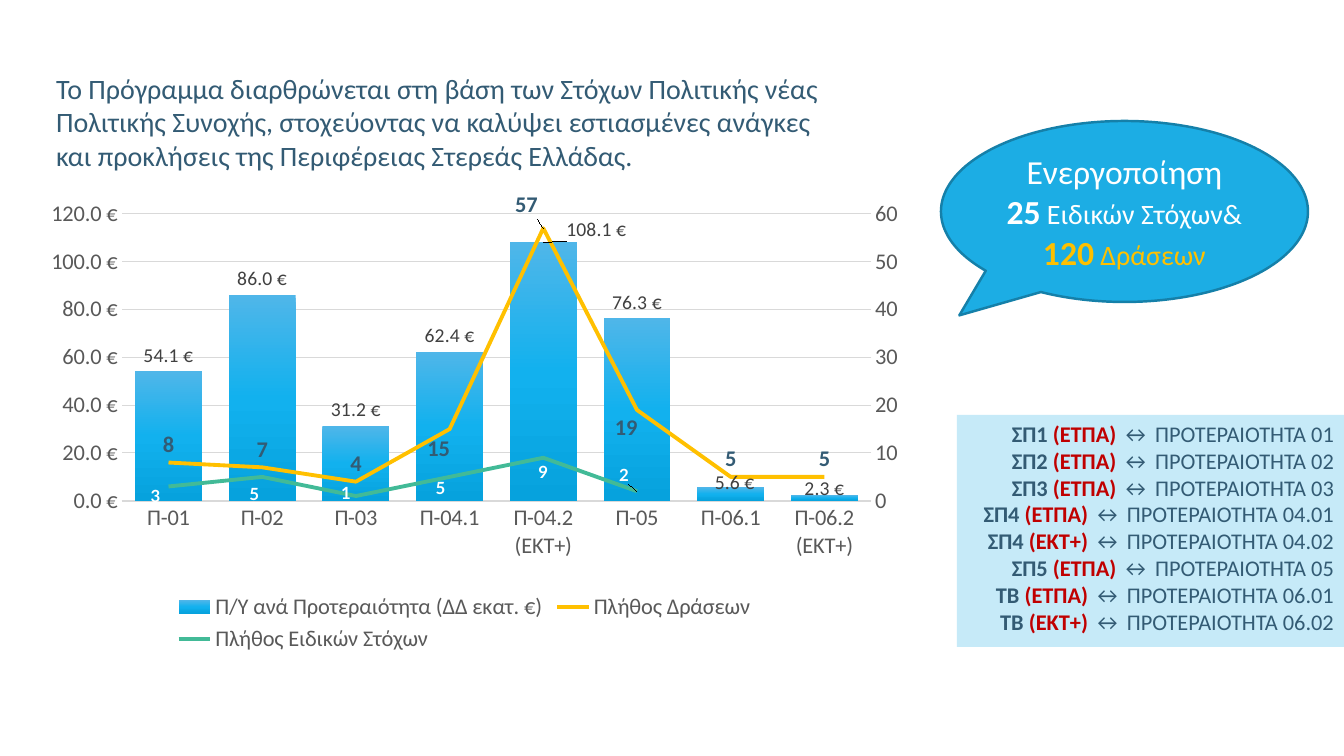
from copy import deepcopy
from dataclasses import dataclass
from typing import Any

from lxml import etree
from pptx import Presentation
from pptx.chart.data import CategoryChartData
from pptx.dml.color import RGBColor
from pptx.enum.chart import XL_CHART_TYPE, XL_LABEL_POSITION, XL_LEGEND_POSITION, XL_MARKER_STYLE, XL_TICK_MARK
from pptx.enum.shapes import MSO_SHAPE
from pptx.enum.text import MSO_ANCHOR, MSO_AUTO_SIZE, PP_ALIGN
from pptx.oxml import parse_xml
from pptx.oxml.ns import nsdecls, qn
from pptx.util import Emu, Pt

COLUMN = XL_CHART_TYPE.COLUMN_CLUSTERED
OUT_END, ABOVE, BELOW = XL_LABEL_POSITION.OUTSIDE_END, XL_LABEL_POSITION.ABOVE, XL_LABEL_POSITION.BELOW
LEGEND_BOTTOM = XL_LEGEND_POSITION.BOTTOM
NO_MARKER = XL_MARKER_STYLE.NONE
NO_TICK = XL_TICK_MARK.NONE
RECT, CALLOUT = MSO_SHAPE.RECTANGLE, MSO_SHAPE.OVAL_CALLOUT
TOP, MIDDLE = MSO_ANCHOR.TOP, MSO_ANCHOR.MIDDLE
NO_FIT = MSO_AUTO_SIZE.NONE
LEFT, CENTER, RIGHT = PP_ALIGN.LEFT, PP_ALIGN.CENTER, PP_ALIGN.RIGHT

NAVY, BLUE, RED, GOLD, GREEN = "335B74", "1CADE4", "C00000", "FFC000", "42BA97"
WHITE, GREY, PALE = "FFFFFF", "595959", "D9D9D9"
EURO = '#,##0.0\\ "€"'
CHART_W, CHART_H = 929, 480


@dataclass(frozen=True)
class Style:
    size: int
    color: str
    bold: bool = False
    name: str = "Calibri"


@dataclass(frozen=True)
class Measure:
    name: str
    values: tuple
    label: Style
    position: Any
    shifts: dict[int, tuple[int, int]]
    color: str = BLUE
    fmt: str = "General"


MEASURES = (
    Measure("Π/Υ ανά Προτεραιότητα (ΔΔ εκατ. €)", (54.1, 86, 31.2, 62.4, 108.1, 76.3, 5.6, 2.3),
            Style(14, "404040"), OUT_END, {4: (53, 3), 6: (4, 11), 7: (0, 9)}, fmt=EURO),
    Measure("Πλήθος Δράσεων", (8, 7, 4, 15, 57, 19, 5, 5),
            Style(16, NAVY, True), ABOVE, {3: (-11, 38), 4: (-17, -5), 5: (-11, 36)}, GOLD),
    Measure("Πλήθος Ειδικών Στόχων", (3, 5, 1, 5, 9, 2, None, None),
            Style(12, WHITE, True, "Lato"), BELOW,
            {0: (-13, -5), 1: (-8, 3), 2: (-10, -17), 3: (-9, -3), 5: (-13, -31)}, GREEN),
)
CATEGORIES = ("Π-01", "Π-02", "Π-03", "Π-04.1", "Π-04.2 (ΕΚΤ+)", "Π-05", "Π-06.1", "Π-06.2 (ΕΚΤ+)")
PRIORITIES = (
    ("ΣΠ1", "ΕΤΠΑ", "01"), ("ΣΠ2", "ΕΤΠΑ", "02"), ("ΣΠ3", "ΕΤΠΑ", "03"), ("ΣΠ4", "ΕΤΠΑ", "04.01"),
    ("ΣΠ4", "ΕΚΤ+", "04.02"), ("ΣΠ5", "ΕΤΠΑ", "05"), ("ΤΒ", "ΕΤΠΑ", "06.01"), ("ΤΒ", "ΕΚΤ+", "06.02"),
)
INTRO = ("Το Πρόγραμμα διαρθρώνεται στη βάση των Στόχων Πολιτικής νέας Πολιτικής Συνοχής, "
         "στοχεύοντας να καλύψει εστιασμένες ανάγκες και προκλήσεις της Περιφέρειας Στερεάς Ελλάδας.")


def px(n: int) -> Emu:
    return Emu(round(n * 914400 / 100.8))


def rgb(color: str) -> RGBColor:
    return RGBColor.from_string(color)


def set_attrs(obj: Any, values: dict[str, Any]) -> None:
    for key, value in values.items():
        setattr(obj, key, value)


def set_font(font: Any, style: Style) -> None:
    set_attrs(font, {"name": style.name, "size": Pt(style.size), "bold": style.bold})
    font.color.rgb = rgb(style.color)


def set_line(line: Any, color: str, width: float) -> None:
    line.color.rgb = rgb(color)
    line.width = Pt(width)


def write(tf: Any, paragraphs: list, align: Any, anchor: Any) -> None:
    set_attrs(tf, {"word_wrap": True, "auto_size": NO_FIT, "vertical_anchor": anchor})
    for i, runs in enumerate(paragraphs):
        p = tf.add_paragraph() if i else tf.paragraphs[0]
        p.alignment = align
        for text, style in runs:
            r = p.add_run()
            r.text = text
            set_font(r.font, style)


def add_box(s: Any, kind: Any, x: int, y: int, w: int, h: int) -> Any:
    sp = s.shapes.add_shape(kind, px(x), px(y), px(w), px(h))
    sp.shadow.inherit = False
    sp.fill.solid()
    sp.fill.fore_color.rgb = rgb(BLUE)
    return sp


def layout_xml(extra: str, x: float, y: float) -> Any:
    return parse_xml(f'<c:layout {nsdecls("c")}><c:manualLayout>{extra}'
                     f'<c:x val="{x:.4f}"/><c:y val="{y:.4f}"/></c:manualLayout></c:layout>')


def drop(parent: Any, tag: str) -> None:
    for child in parent.findall(qn(tag)):
        parent.remove(child)


def move_to_lines(chart: Any) -> None:
    area = chart.element.xpath(".//c:plotArea")[0]
    bar = area.find(qn("c:barChart"))
    lines = parse_xml(f'<c:lineChart {nsdecls("c")}><c:grouping val="standard"/><c:varyColors val="0"/>'
                      '<c:marker val="1"/><c:axId val="5001"/><c:axId val="5002"/></c:lineChart>')
    for ser in bar.findall(qn("c:ser"))[1:]:
        drop(ser, "c:invertIfNegative")
        lines.find(qn("c:marker")).addprevious(ser)
    bar.addnext(lines)
    cat, val = area.find(qn("c:catAx")), area.find(qn("c:valAx"))
    cat2, val2 = deepcopy(cat), deepcopy(val)
    drop(val2, "c:majorGridlines")
    settings = (
        (cat2, {"axId": "5001", "crossAx": "5002", "delete": "1"}),
        (val2, {"axId": "5002", "crossAx": "5001", "axPos": "r", "crosses": "max", "majorUnit": "10"}),
    )
    for axis, values in settings:
        for tag, value in values.items():
            axis.find(qn(f"c:{tag}")).set("val", value)
    val2.find(qn("c:scaling")).find(qn("c:max")).set("val", "60")
    val2.find(qn("c:numFmt")).set("formatCode", "General")
    val.addnext(val2)
    val2.addnext(cat2)


def label_series(chart: Any, index: int, series: Any, m: Measure) -> None:
    labels = series.data_labels
    set_attrs(labels, {"show_value": True, "position": m.position,
                       "number_format": m.fmt, "number_format_is_linked": False})
    set_font(labels.font, m.label)
    fmt = m.fmt.replace('"', "&quot;")
    for point, (dx, dy) in m.shifts.items():
        label = series.points[point].data_label
        label.position = m.position
        set_font(label.font, m.label)
        node = chart.element.xpath(f'.//c:ser[c:idx/@val="{index}"]//c:dLbl[c:idx/@val="{point}"]')[0]
        node.insert(1, layout_xml("", dx / CHART_W, dy / CHART_H))
        node.insert(2, parse_xml(f'<c:numFmt {nsdecls("c")} formatCode="{fmt}" sourceLinked="0"/>'))


def fill_columns(chart: Any, series: Any) -> None:
    fill = series.format.fill
    fill.gradient()
    fill.gradient_angle = 270
    for stop, color, position in zip(fill.gradient_stops, ("4FB6E9", "06A2DD"), (0, 1)):
        stop.color.rgb = rgb(color)
        stop.position = position
    stops = chart.element.xpath(".//c:barChart/c:ser/c:spPr/a:gradFill/a:gsLst")[0]
    stops.insert(1, parse_xml(f'<a:gs {nsdecls("a")} pos="50000"><a:srgbClr val="12B1EE"/></a:gs>'))


def add_budget_chart(s: Any) -> None:
    data = CategoryChartData()
    data.categories = CATEGORIES
    for m in MEASURES:
        data.add_series(m.name, m.values, m.fmt)
    chart = s.shapes.add_chart(COLUMN, px(0), px(177), px(CHART_W), px(CHART_H), data).chart
    set_attrs(chart, {"has_title": False, "has_legend": True})
    set_font(chart.font, Style(10, "000000", name="Lato"))
    set_attrs(chart.legend, {"position": LEGEND_BOTTOM, "include_in_layout": False})
    set_font(chart.legend.font, Style(16, GREY))
    cat, val = chart.category_axis, chart.value_axis
    for axis in (cat, val):
        set_attrs(axis, {"major_tick_mark": NO_TICK, "minor_tick_mark": NO_TICK})
        set_font(axis.tick_labels.font, Style(16, GREY))
    set_line(cat.format.line, PALE, 1)
    val.format.line.fill.background()
    set_line(val.major_gridlines.format.line, PALE, 0.75)
    set_attrs(val, {"minimum_scale": 0, "maximum_scale": 120, "major_unit": 20})
    set_attrs(val.tick_labels, {"number_format": EURO, "number_format_is_linked": False})
    set_attrs(chart.plots[0], {"gap_width": 40, "overlap": -27, "vary_by_categories": False})
    move_to_lines(chart)
    area = chart.element.xpath(".//c:plotArea")[0]
    drop(area, "c:layout")
    layout = layout_xml('<c:layoutTarget val="inner"/><c:xMode val="edge"/><c:yMode val="edge"/>', 0.131, 0.077)
    for tag, size in (("w", "0.807"), ("h", "0.598")):
        etree.SubElement(layout[0], qn(f"c:{tag}"), val=size)
    area.insert(0, layout)
    columns, lines = chart.plots
    fill_columns(chart, columns.series[0])
    for series, m in zip(lines.series, MEASURES[1:]):
        set_line(series.format.line, m.color, 2.75)
        series.marker.style = NO_MARKER
        series.smooth = False
    for i, (series, m) in enumerate(zip((*columns.series, *lines.series), MEASURES)):
        label_series(chart, i, series, m)


def main() -> None:
    prs = Presentation()
    set_attrs(prs, {"slide_width": px(1344), "slide_height": px(756)})
    s = prs.slides.add_slide(prs.slide_layouts[5])
    title = s.shapes.title
    set_attrs(title, {"left": px(46), "top": px(66), "width": px(787), "height": px(112)})
    write(title.text_frame, [[(INTRO, Style(20, NAVY))]], LEFT, TOP)
    add_budget_chart(s)

    sp = add_box(s, RECT, 957, 415, 387, 232)
    sp.line.fill.background()
    etree.SubElement(sp.element.xpath("./p:spPr/a:solidFill/a:srgbClr")[0], qn("a:alpha"), val="25000")
    rows = [[(f"{goal} ", Style(16, NAVY, True)), (f"({fund}) ", Style(16, RED, True)),
             (f"↔ ΠΡΟΤΕΡΑΙΟΤΗΤΑ {number}", Style(16, NAVY))] for goal, fund, number in PRIORITIES]
    write(sp.text_frame, rows, RIGHT, TOP)

    sp = add_box(s, CALLOUT, 941, 121, 367, 181)
    sp.adjustments[0], sp.adjustments[1] = -0.45, 0.574
    set_line(sp.line, "1580A9", 1.75)
    write(sp.text_frame, [
        [("Ενεργοποίηση", Style(24, WHITE))],
        [("25", Style(24, WHITE, True)), (" Ειδικών Στόχων& ", Style(20, WHITE)),
         ("120", Style(24, GOLD, True)), (" Δράσεων", Style(20, GOLD))],
    ], CENTER, MIDDLE)
    prs.save("out.pptx")


if __name__ == "__main__":
    main()
